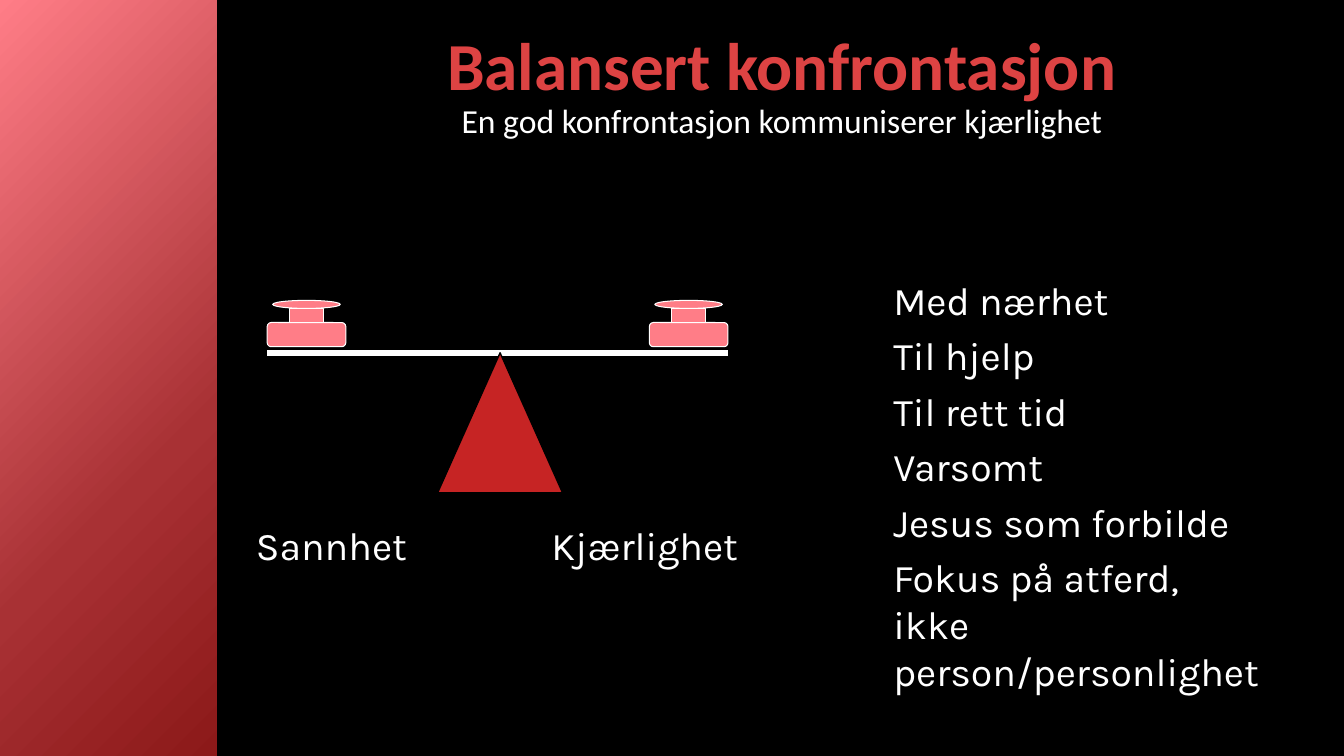
from copy import deepcopy

from pptx import Presentation
from pptx.dml.color import RGBColor
from pptx.enum.shapes import MSO_CONNECTOR, MSO_SHAPE as SHAPE
from pptx.enum.text import MSO_ANCHOR as ANCHOR, PP_ALIGN as ALIGN
from pptx.oxml.ns import qn
from pptx.oxml.xmlchemy import OxmlElement as Element
from pptx.util import Inches, Pt

WHITE, BLACK, RED, DARK, PINK = "FFFFFF", "000000", "DD4343", "C62424", "FF7D87"
POINTS = ["Med nærhet", "Til hjelp", "Til rett tid", "Varsomt",
          "Jesus som forbilde", "Fokus på atferd, ikke person/personlighet"]


def color(code):
    return RGBColor.from_string(code)


def place(item, box):
    item.left, item.top, item.width, item.height = map(Inches, box)


def style(para, font, size, code, bold=False):
    for run in para.runs:
        run.font.name = font
        run.font.size = Pt(size)
        run.font.bold = bold
        run.font.color.rgb = color(code)


def add_text(slide, box, text):
    frame = slide.shapes.add_textbox(*map(Inches, box)).text_frame
    frame.word_wrap = True
    frame.text = text
    return frame


def add_part(slide, kind, box, fill, line, width):
    part = slide.shapes.add_shape(kind, *map(Inches, box))
    part.shadow.inherit = False
    part.fill.solid()
    part.fill.fore_color.rgb = color(fill)
    part.line.color.rgb = color(line)
    part.line.width = Pt(width)


def add_band(slide, box):
    band = slide.shapes.add_shape(SHAPE.RECTANGLE, *map(Inches, box))
    band.shadow.inherit = False
    band.line.fill.background()
    band.fill.gradient()
    band.fill.gradient_angle = 315  # counter-clockwise: runs to lower right
    stops = band._element.spPr.find(qn("a:gradFill")).find(qn("a:gsLst"))
    stops.append(deepcopy(stops[-1]))
    shades = [(0, PINK), (0.64, "A83134"), (1, "8C1919")]
    for stop, (pos, code) in zip(band.fill.gradient_stops, shades):
        stop.position = pos
        stop.color.rgb = color(code)


def add_head(slide, box):
    left, top, width, height = box
    title = slide.shapes.title
    place(title, box)
    title.text_frame.text = "Balansert konfrontasjon"
    title.text_frame.vertical_anchor = ANCHOR.BOTTOM
    sub = add_text(slide, (left, top + 0.84, width, 0.4),
                   "En god konfrontasjon kommuniserer kjærlighet")
    for frame, size, code in ((title.text_frame, 48, RED), (sub, 24, WHITE)):
        para = frame.paragraphs[0]
        para.alignment = ALIGN.CENTER
        para.line_spacing = 0.9
        style(para, "Calibri", size, code, bold=size == 48)


def add_weight(slide, left, base):
    """Draw a weight whose foot stands on the height base."""
    for kind, dx, rise, width, height in (
            (SHAPE.ROUNDED_RECTANGLE, 0, 0.24, 0.78, 0.24),
            (SHAPE.OVAL, 0.055, 0.46, 0.67, 0.08),
            (SHAPE.RECTANGLE, 0.225, 0.38, 0.33, 0.14)):
        add_part(slide, kind, (left + dx, base - rise, width, height),
                 PINK, WHITE, 0.75)


def add_scale(slide, box):
    left, top, width, height = box
    beam_y = top + 0.52
    beam = slide.shapes.add_connector(
        MSO_CONNECTOR.STRAIGHT,
        *map(Inches, (left, beam_y, left + width, beam_y)))
    beam.line.color.rgb = color(WHITE)
    beam.line.width = Pt(4)
    beam._element.spPr.append(Element("a:effectLst"))
    add_part(slide, SHAPE.ISOSCELES_TRIANGLE,
             (left + 1.69, beam_y, 1.24, height - 0.52), DARK, BLACK, 1)
    for x in (left, left + width - 0.78):
        add_weight(slide, x, beam_y - 0.06)


def add_labels(slide, box):
    para = add_text(slide, box, "Sannhet\tKjærlighet").paragraphs[0]
    tabs, tab = Element("a:tabLst"), Element("a:tab")
    tab.set("pos", str(Inches(2.93)))
    tab.set("algn", "l")
    tabs.append(tab)
    para._p.get_or_add_pPr().append(tabs)
    style(para, "Karla", 28, WHITE)


def add_list(slide, box):
    frame = add_text(slide, box, "\n".join(POINTS))
    frame.margin_left = frame.margin_right = Inches(0.04)
    frame.margin_top = frame.margin_bottom = Inches(0.04)
    for para in frame.paragraphs:
        para.space_after = Pt(6)
        style(para, "Karla", 28, WHITE)


def main():
    deck = Presentation()
    deck.slide_width, deck.slide_height = Inches(13.33), Inches(7.5)
    slide = deck.slides.add_slide(deck.slide_layouts[5])
    slide.background.fill.solid()
    slide.background.fill.fore_color.rgb = color(BLACK)
    add_band(slide, (0, 0, 2.15, 7.5))
    add_head(slide, (2.39, 0.15, 10.73, 0.94))
    add_labels(slide, (2.44, 5.12, 5.07, 0.57))
    add_scale(slide, (2.65, 2.98, 4.57, 1.91))
    add_list(slide, (8.82, 2.7, 3.74, 3.78))
    deck.save("out.pptx")


if __name__ == "__main__":
    main()
